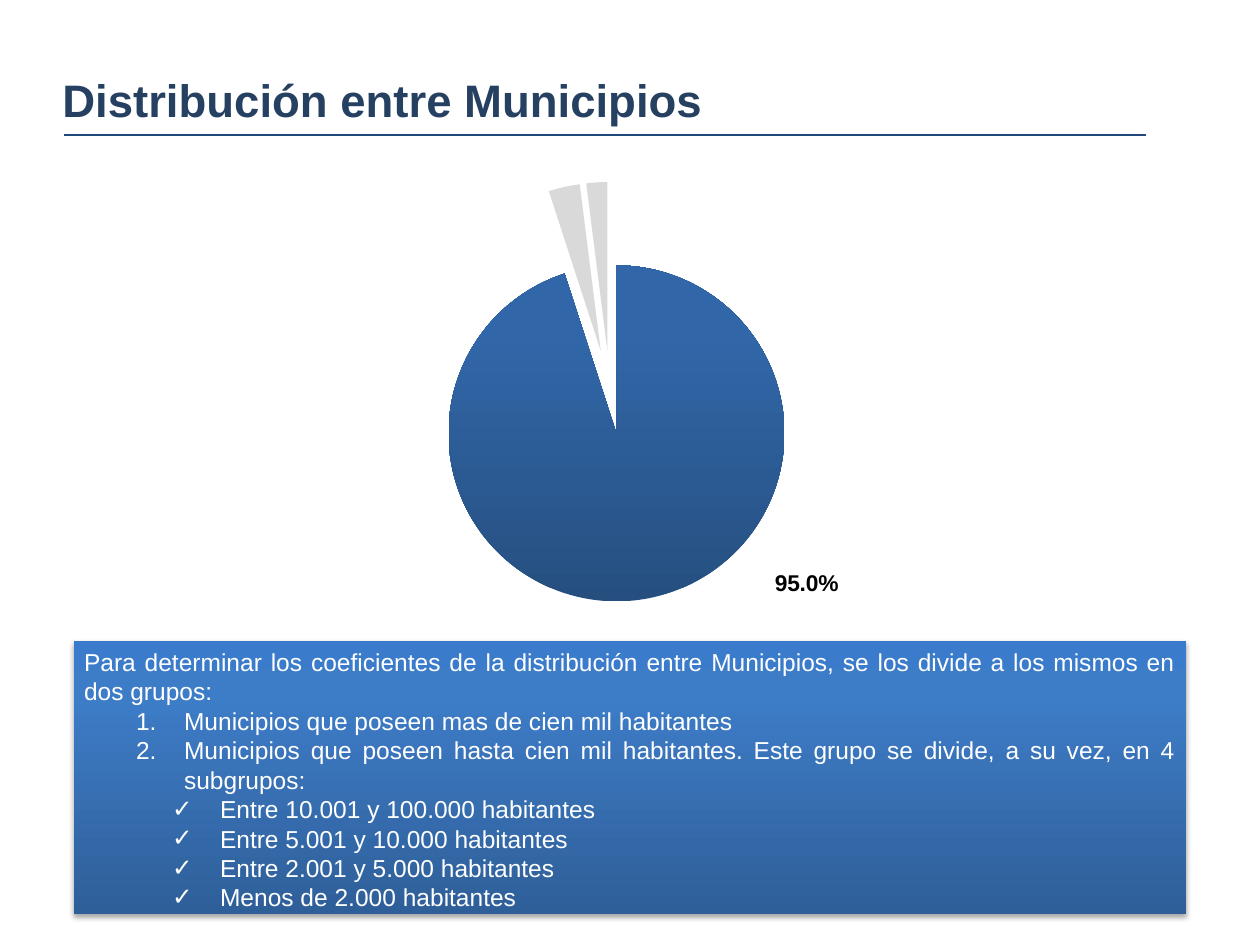
from copy import deepcopy

from pptx import Presentation
from pptx.chart.data import CategoryChartData
from pptx.dml.color import RGBColor
from pptx.enum.chart import XL_CHART_TYPE, XL_LABEL_POSITION
from pptx.enum.shapes import MSO_CONNECTOR, MSO_SHAPE
from pptx.enum.text import MSO_ANCHOR, PP_ALIGN
from pptx.oxml import parse_xml
from pptx.oxml.ns import nsdecls
from pptx.util import Pt

PX = 914400 / 126
CHART_WIDTH, CHART_HEIGHT = 1097, 718


def color(value):
    return RGBColor.from_string(value)


def fill_upward(fill, holder, stops):
    """Give a three-stop gradient that runs from bottom to top."""
    fill.gradient()
    fill.gradient_angle = 90
    stop_list = holder.xpath(".//a:gsLst")[0]
    stop_list.insert(0, deepcopy(stop_list[0]))
    for stop, (position, value) in zip(fill.gradient_stops, stops):
        stop.position = position
        stop.color.rgb = color(value)


deck = Presentation()
deck.slide_width, deck.slide_height = round(1260 * PX), round(945 * PX)
page = deck.slides.add_slide(deck.slide_layouts[6])

# Pie chart
data = CategoryChartData()
data.categories = ["1", "2", "3"]
data.add_series("Series 1", (95, 3, 2))
left, top, width, height = [round(n * PX) for n in (74, 137, CHART_WIDTH, CHART_HEIGHT)]
chart = page.shapes.add_chart(XL_CHART_TYPE.PIE, left, top, width, height, data).chart
chart.has_legend = False
chart.has_title = False
chart.font.name = "Calibri"
chart.font.size = Pt(13)
chart.font.color.rgb = color("000000")
plot_area = chart.plots[0]._element.getparent()
for layout in plot_area.xpath("c:layout"):
    plot_area.remove(layout)
plot_area.insert(0, parse_xml(
    f'<c:layout {nsdecls("c")}><c:manualLayout><c:layoutTarget val="inner"/>'
    '<c:xMode val="edge"/><c:yMode val="edge"/>'
    f'<c:x val="{9 / CHART_WIDTH}"/><c:y val="{45 / CHART_HEIGHT}"/>'
    f'<c:w val="{1054 / CHART_WIDTH}"/><c:h val="{420 / CHART_HEIGHT}"/>'
    '</c:manualLayout></c:layout>'))

chart.plots[0].vary_by_categories = True
series = chart.plots[0].series[0]
for index in (1, 2):
    fill = series.points[index].format.fill
    fill.solid()
    fill.fore_color.rgb = color("D9D9D9")
main_format = series.points[0].format
main_format.fill.solid()
main_slice = series._element.xpath("c:dPt[c:idx/@val='0']")[0]
fill_upward(main_format.fill, main_slice,
            [(0, "264F80"), (0.8, "3167A8"), (1, "2F67A9")])
series._element.xpath("c:dPt")[0].addprevious(
    parse_xml(f'<c:explosion {nsdecls("c")} val="25"/>'))

series.data_labels.show_value = False
for leader in series._element.xpath("c:dLbls/c:showLeaderLines"):
    leader.set("val", "0")
label = series.points[0].data_label
label.position = XL_LABEL_POSITION.OUTSIDE_END
label.font.name = "Arial"
label.font.size = Pt(13)
label.font.bold = True
label.font.color.rgb = color("000000")
label_xml = series._element.xpath("c:dLbls/c:dLbl")[0]
label_xml.xpath("c:showVal")[0].set("val", "0")
label_xml.xpath("c:showPercent")[0].set("val", "1")
label_index = label_xml.xpath("c:idx")[0]
label_index.addnext(parse_xml(
    f'<c:numFmt {nsdecls("c")} formatCode="0.0%" sourceLinked="0"/>'))
label_index.addnext(parse_xml(
    f'<c:layout {nsdecls("c")}><c:manualLayout><c:x val="{131 / CHART_WIDTH}"/>'
    f'<c:y val="{-35 / CHART_HEIGHT}"/></c:manualLayout></c:layout>'))

# Explanation box
left, top, width, height = [round(n * PX) for n in (74, 641, 1112, 273)]
box = page.shapes.add_shape(MSO_SHAPE.RECTANGLE, left, top, width, height)
box.line.fill.background()
fill_upward(box.fill, box._element.spPr,
            [(0, "2F5F99"), (0.8, "3D7CC7"), (1, "3A7CCB")])
box._element.spPr.append(parse_xml(
    f'<a:effectLst {nsdecls("a")}><a:outerShdw blurRad="{Pt(3.1)}" dist="{Pt(1.8)}" '
    'dir="5400000" rotWithShape="0"><a:srgbClr val="000000"><a:alpha val="35000"/>'
    '</a:srgbClr></a:outerShdw></a:effectLst>'))
frame = box.text_frame
frame.word_wrap = True
frame.vertical_anchor = MSO_ANCHOR.TOP
frame.margin_left = frame.margin_right = round(10 * PX)
frame.margin_top = frame.margin_bottom = round(6 * PX)

NUMBER = '<a:buFont {} typeface="+mj-lt"/>', '<a:buAutoNum {} type="arabicPeriod"/>'
CHECK = '<a:buFont {} typeface="Arial"/>', '<a:buChar {} char="✓"/>'
paragraphs = [
    ("Para determinar los coeficientes de la distribución entre Municipios, "
     "se los divide a los mismos en dos grupos:", 0, 0, ()),
    ("Municipios que poseen mas de cien mil habitantes", 2, 100, NUMBER),
    ("Municipios que poseen hasta cien mil habitantes. Este grupo se divide, "
     "a su vez, en 4 subgrupos:", 2, 100, NUMBER),
    ("Entre 10.001 y 100.000 habitantes", 7, 136, CHECK),
    ("Entre 5.001 y 10.000 habitantes", 7, 136, CHECK),
    ("Entre 2.001 y 5.000 habitantes", 7, 136, CHECK),
    ("Menos de 2.000 habitantes", 7, 136, CHECK),
]
for index, (text, level, indent, bullet) in enumerate(paragraphs):
    para = frame.add_paragraph() if index else frame.paragraphs[0]
    para.text = text
    para.level = level
    para.alignment = PP_ALIGN.JUSTIFY
    if bullet:
        properties = para._p.get_or_add_pPr()
        properties.set("marL", str(round(indent * PX)))
        properties.set("indent", str(round(-48 * PX)))
        for part in bullet:
            properties.append(parse_xml(part.format(nsdecls("a"))))
    font = para.runs[0].font
    font.name = "Arial"
    font.size = Pt(14)
    font.color.rgb = color("FFFFFF")

# Title and its rule
left, right, level = [round(n * PX) for n in (64, 1146, 135)]
rule = page.shapes.add_connector(MSO_CONNECTOR.STRAIGHT, left, level, right, level)
rule.line.color.rgb = color("1F497D")
rule.line.width = Pt(1.5)
rule._element.spPr.append(parse_xml(f'<a:effectLst {nsdecls("a")}/>'))

left, top, width, height = [round(n * PX) for n in (50, 66, 1112, 68)]
title = page.shapes.add_textbox(left, top, width, height)
title.text_frame.word_wrap = True
title.text_frame.text = "Distribución entre Municipios"
font = title.text_frame.paragraphs[0].runs[0].font
font.name = "Arial"
font.size = Pt(26)
font.bold = True
font.color.rgb = color("254061")

deck.save("out.pptx")
